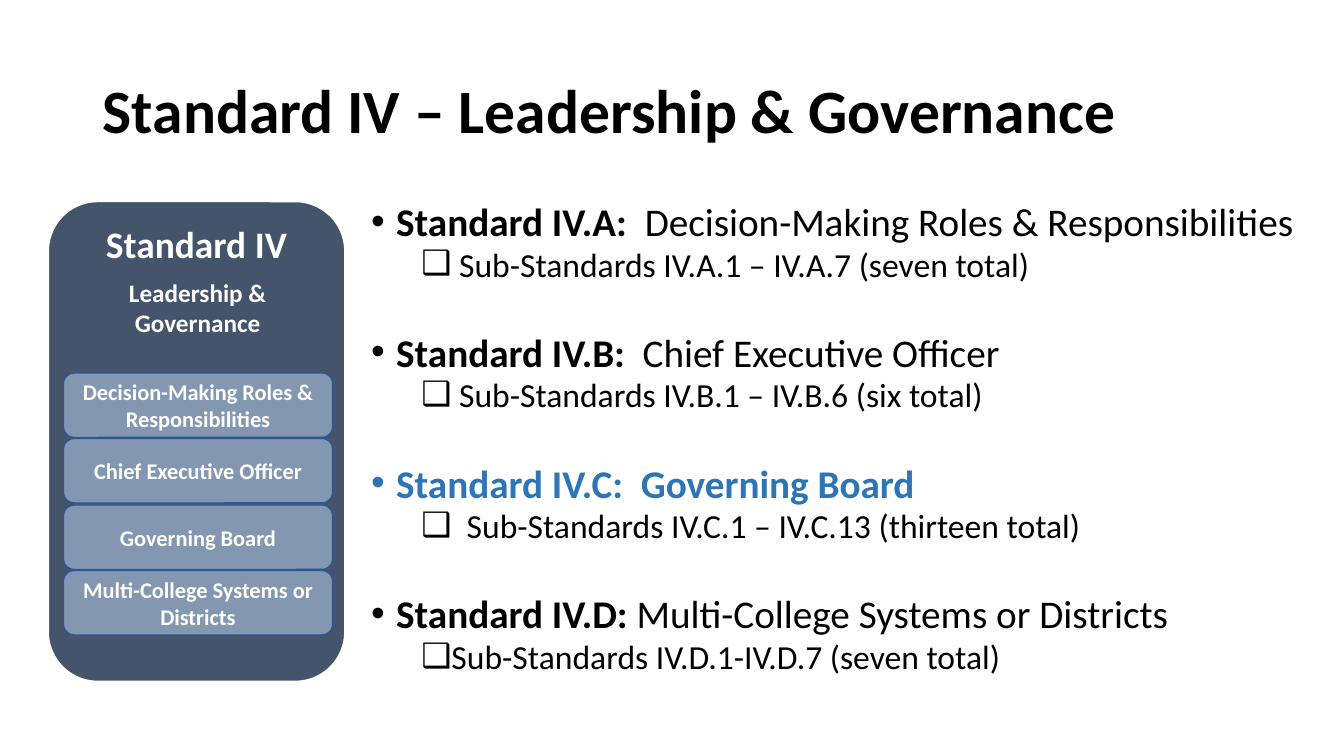
from lxml import etree
from pptx import Presentation
from pptx.dml.color import RGBColor
from pptx.enum.shapes import MSO_SHAPE
from pptx.enum.text import MSO_ANCHOR, MSO_AUTO_SIZE, PP_ALIGN
from pptx.oxml.ns import qn
from pptx.util import Pt

ROUNDED = MSO_SHAPE.ROUNDED_RECTANGLE
TOP, MIDDLE = MSO_ANCHOR.TOP, MSO_ANCHOR.MIDDLE
LEFT, CENTER = PP_ALIGN.LEFT, PP_ALIGN.CENTER
NO_AUTOFIT = MSO_AUTO_SIZE.NONE

EMU_PER_PX = 9144  # 100 px to the inch
FONT = "Calibri"
BLACK, WHITE, BLUE = "000000", "FFFFFF", "2E75B6"
NAVY, SLATE, PILL_EDGE = "44546A", "8497B0", "325491"

TITLE = "Standard IV – Leadership & Governance"
AREAS = ["Decision-Making Roles & Responsibilities", "Chief Executive Officer",
         "Governing Board", "Multi-College Systems or Districts"]
# Bold lead, plain rest, sub-standards, colour of the heading
STANDARDS = [
    ("Standard IV.A:  ", AREAS[0], " Sub-Standards IV.A.1 – IV.A.7 (seven total)", BLACK),
    ("Standard IV.B:  ", AREAS[1], " Sub-Standards IV.B.1 – IV.B.6 (six total)", BLACK),
    ("Standard IV.C:  Governing Board", "",
     "  Sub-Standards IV.C.1 – IV.C.13 (thirteen total)", BLUE),
    ("Standard IV.D: ", AREAS[3], "Sub-Standards IV.D.1-IV.D.7 (seven total)", BLACK),
]


def px(length):
    return length * EMU_PER_PX


def color(value):
    return RGBColor.from_string(value)


def place(shape, box):
    shape.left, shape.top, shape.width, shape.height = map(px, box)


def style_run(run, size, fill, bold):
    run.font.name = FONT
    run.font.size = Pt(size)
    run.font.color.rgb = color(fill)
    run.font.bold = bold


def set_bullet(paragraph, character, margin, indent):
    properties = paragraph._p.get_or_add_pPr()
    properties.set("marL", str(px(margin)))
    properties.set("indent", str(px(indent)))
    etree.SubElement(properties, qn("a:buFont")).set("typeface", "Arial")
    etree.SubElement(properties, qn("a:buChar")).set("char", character)


def add_title(slide, box):
    title = slide.shapes.title
    place(title, box)
    frame = title.text_frame
    frame.text = TITLE
    frame.auto_size = NO_AUTOFIT
    frame.vertical_anchor = MIDDLE
    paragraph = frame.paragraphs[0]
    paragraph.alignment = LEFT
    paragraph.line_spacing = 0.9
    style_run(paragraph.runs[0], 44, BLACK, True)


def add_standards(slide, box):
    body = slide.placeholders[1]
    place(body, box)
    frame = body.text_frame
    frame.auto_size = NO_AUTOFIT
    for index, (lead, rest, detail, fill) in enumerate(STANDARDS):
        heading = frame.add_paragraph() if index else frame.paragraphs[0]
        heading.space_before = Pt(38.4 if index else 10)
        for text, bold in ((lead, True), (rest, False)):
            if text:
                run = heading.add_run()
                run.text = text
                style_run(run, 28, fill, bold)

        sub_item = frame.add_paragraph()
        sub_item.text = detail
        sub_item.level = 1
        sub_item.space_before = Pt(5)
        style_run(sub_item.runs[0], 24, BLACK, False)

        for paragraph, bullet, margin in ((heading, "•", 25), (sub_item, "❑", 75)):
            paragraph.line_spacing = 0.8
            set_bullet(paragraph, bullet, margin, -25)


def add_card(slide, box, text, size, fill=None, edge=None, anchor=TOP, inset=0):
    card = slide.shapes.add_shape(ROUNDED, *map(px, box))
    card.shadow.inherit = False
    if fill:
        card.fill.solid()
        card.fill.fore_color.rgb = color(fill)
        card.line.color.rgb = color(edge)
        card.line.width = Pt(1)
    else:
        card.fill.background()
        card.line.fill.background()
    frame = card.text_frame
    frame.text = text
    frame.word_wrap = True
    frame.vertical_anchor = anchor
    frame.margin_left = frame.margin_right = px(2 * inset)
    frame.margin_top = frame.margin_bottom = px(inset)
    paragraph = frame.paragraphs[0]
    paragraph.alignment = CENTER
    style_run(paragraph.runs[0], size, WHITE, True)


def add_panel(slide, box):
    left, top, width, height = box
    add_card(slide, box, "Standard IV", 26.7, NAVY, WHITE, inset=5)
    add_card(slide, (left + 11, top + 69, width - 20, 120), "Leadership & Governance", 18)
    # Stack of areas
    pitch = 65.3
    for index, area in enumerate(AREAS):
        pill_top = top + round(170 + index * pitch)
        add_card(slide, (left + 15, pill_top, width - 27, 64), area, 16,
                 SLATE, PILL_EDGE, MIDDLE)


def main():
    presentation = Presentation()
    presentation.slide_width, presentation.slide_height = px(1333), px(750)
    slide = presentation.slides.add_slide(presentation.slide_layouts[1])
    add_title(slide, (92, 40, 1150, 145))
    add_standards(slide, (358, 200, 958, 476))
    add_panel(slide, (48, 200, 294, 476))
    presentation.save("out.pptx")


if __name__ == "__main__":
    main()
